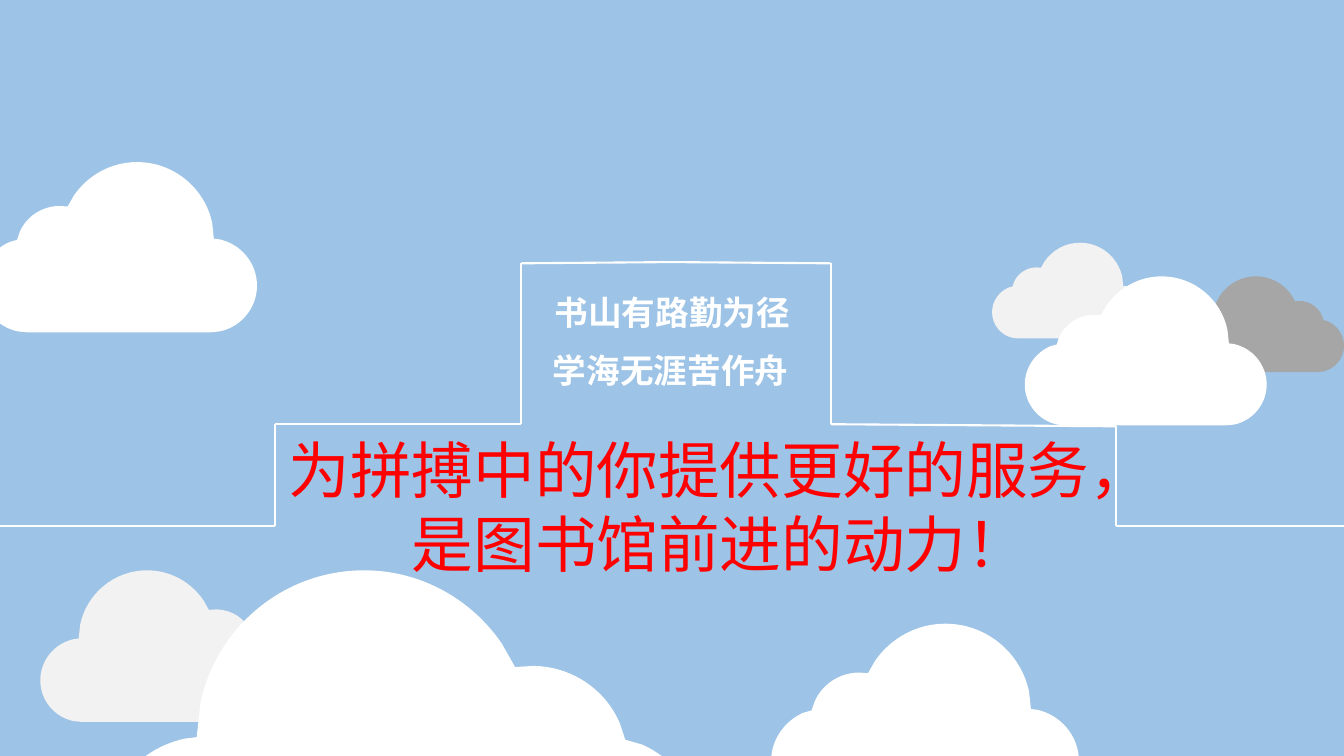
from dataclasses import dataclass
from itertools import pairwise

from lxml import etree
from pptx import Presentation
from pptx import util as u
from pptx.dml.color import RGBColor
from pptx.enum import shapes, text
from pptx.oxml import ns
from pptx.slide import Slide

SKY = RGBColor(0x9D, 0xC3, 0xE6)
WHITE = RGBColor(0xFF, 0xFF, 0xFF)
PALE = RGBColor(0xF2, 0xF2, 0xF2)
GREY = RGBColor(0xA6, 0xA6, 0xA6)
RED = RGBColor(0xFF, 0x00, 0x00)

FONT = "Noto Sans CJK SC"
LINE_HEIGHT = 1.2
COLUMNS, ROWS = 160, 90
SLIDE_WIDTH, SLIDE_HEIGHT = u.Inches(13.33), u.Inches(7.5)
CLOUD_HEIGHT_PERCENT = 61.6

Point = tuple[float, float]


@dataclass(frozen=True)
class Caption:
    lines: tuple[str, ...]
    column: float
    row: float
    columns: float
    rows: float
    size: int
    color: RGBColor
    bold: bool = False
    align: text.PP_ALIGN = text.PP_ALIGN.LEFT


@dataclass(frozen=True)
class Cloud:
    column: float
    row: float
    columns: float
    color: RGBColor
    mirrored: bool = False


CAPTIONS = (
    Caption(("学海无涯苦作舟",), 64.65, 41.1, 30.7, 6, 24, WHITE, bold=True),
    Caption(("书山有路勤为径",), 64.85, 34.15, 30.7, 6, 24, WHITE, bold=True),
    Caption(("为拼搏中的你提供更好的服务，", "是图书馆前进的动力！"),
            32.7, 50.8, 106.1, 27.8, 44, RED, align=text.PP_ALIGN.CENTER),
)

# Corners of the stepped podium, in columns and rows
PODIUM = (
    (0, 62.64), (32.76, 62.64), (32.76, 50.5), (62.04, 50.5), (62.04, 31.35),
    (79.9, 31.2), (98.9, 31.35), (98.9, 50.5), (132.9, 50.75), (132.9, 62.64),
    (160, 62.64),
)

CLOUDS = (
    Cloud(-2.3, 19.3, 32.9, WHITE, mirrored=True),
    Cloud(4.8, 67.9, 29.3, PALE),
    Cloud(12.25, 67.9, 71.65, WHITE),
    Cloud(91.8, 74.25, 36.65, WHITE, mirrored=True),
    Cloud(141.5, 32.9, 18.5, GREY),
    Cloud(118.1, 28.9, 18.5, PALE, mirrored=True),
    Cloud(122, 32.9, 28.8, WHITE, mirrored=True),
)

# Percent of a cloud's width and height: one point is a straight step,
# three points are a Bézier curve
CLOUD_TOP = (43.4, 0)
CLOUD_STEPS = (
    ((30, 0), (18.8, 15.5), (16.2, 35.9)),
    ((15.6, 45),),
    ((13.6, 45.4),),
    ((5.9, 48.1), (0, 59.2), (0, 72.6)),
    ((0, 85.9), (5.9, 97), (13.6, 99.5)),
    ((16.9, 100),),
    ((83.1, 100),),
    ((86.4, 99.5),),
    ((94.1, 97), (100, 85.9), (100, 72.6)),
    ((100, 61.1), (95.6, 51.4), (89.6, 47)),
    ((86.8, 45.7),),
    ((85.9, 41.3),),
    ((83.6, 32.3), (77.9, 25.8), (71.4, 25.8)),
    ((68.5, 26.1),),
    ((66.3, 19.8),),
    ((61.3, 7.9), (52.9, 0), CLOUD_TOP),
)


def across(columns: float) -> u.Emu:
    return u.Emu(round(SLIDE_WIDTH * columns / COLUMNS))


def down(rows: float) -> u.Emu:
    return u.Emu(round(SLIDE_HEIGHT * rows / ROWS))


def round_steps(outline: etree._Element) -> None:
    """Merge the straight segments of each three-point step into one curve."""
    segments = iter(outline.findall(ns.qn("a:lnTo")))
    for step in CLOUD_STEPS:
        parts = [next(segments) for _ in step]
        if len(parts) == 3:
            curve = etree.Element(ns.qn("a:cubicBezTo"))
            parts[0].addprevious(curve)
            for part in parts:
                curve.append(part[0])
                outline.remove(part)


def draw_cloud(page: Slide, cloud: Cloud) -> None:
    rows = cloud.columns * CLOUD_HEIGHT_PERCENT / 100

    def place(point: Point) -> tuple[u.Emu, u.Emu]:
        x, y = point
        share = 100 - x if cloud.mirrored else x
        return (across(cloud.column + cloud.columns * share / 100),
                down(cloud.row + rows * y / 100))

    builder = page.shapes.build_freeform(*place(CLOUD_TOP))
    builder.add_line_segments(
        [place(point) for step in CLOUD_STEPS for point in step], close=True)
    shape = builder.convert_to_shape()
    round_steps(next(shape._element.iter(ns.qn("a:path"))))
    shape.shadow.inherit = False
    shape.fill.solid()
    shape.fill.fore_color.rgb = cloud.color
    shape.line.fill.background()


def draw_line(page: Slide, start: Point, end: Point) -> None:
    line = page.shapes.add_connector(
        shapes.MSO_CONNECTOR.STRAIGHT,
        across(start[0]), down(start[1]), across(end[0]), down(end[1]))
    line.line.color.rgb = WHITE
    line.line.width = u.Pt(1.5)
    etree.SubElement(line._element.spPr, ns.qn("a:effectLst"))


def draw_caption(page: Slide, caption: Caption) -> None:
    box = page.shapes.add_textbox(across(caption.column), down(caption.row),
                                  across(caption.columns), down(caption.rows))
    frame = box.text_frame
    frame.word_wrap = False
    frame.text = "\n".join(caption.lines)
    for para in frame.paragraphs:
        para.alignment = caption.align
        para.line_spacing = u.Pt(caption.size * LINE_HEIGHT)
        font = para.font
        font.size = u.Pt(caption.size)
        font.bold = caption.bold
        font.color.rgb = caption.color
        font.name = FONT
        east_asian = etree.SubElement(font._element, ns.qn("a:ea"))
        east_asian.set("typeface", FONT)


def main() -> None:
    deck = Presentation()
    deck.slide_width, deck.slide_height = SLIDE_WIDTH, SLIDE_HEIGHT
    page = deck.slides.add_slide(deck.slide_layouts[6])
    page.background.fill.solid()
    page.background.fill.fore_color.rgb = SKY
    for caption in CAPTIONS:
        draw_caption(page, caption)
    for start, end in pairwise(PODIUM):
        draw_line(page, start, end)
    for cloud in CLOUDS:
        draw_cloud(page, cloud)
    deck.save("out.pptx")


if __name__ == "__main__":
    main()
